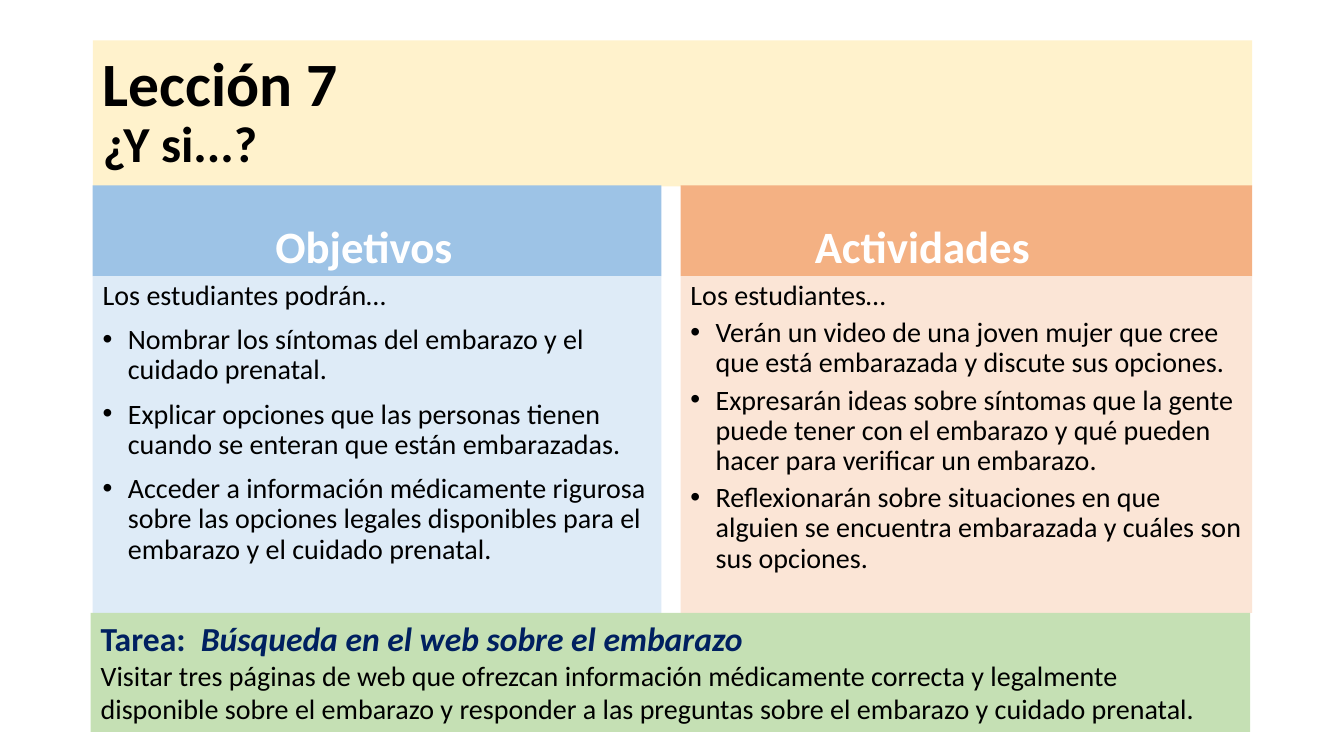
from dataclasses import dataclass

from lxml import etree
from pptx import Presentation
from pptx.dml.color import RGBColor
from pptx.enum.shapes import MSO_SHAPE
from pptx.enum.text import MSO_ANCHOR, MSO_AUTO_SIZE, PP_ALIGN
from pptx.oxml.ns import qn
from pptx.util import Inches, Pt

RECTANGLE = MSO_SHAPE.RECTANGLE
TOP, MIDDLE, BOTTOM = MSO_ANCHOR.TOP, MSO_ANCHOR.MIDDLE, MSO_ANCHOR.BOTTOM
LEFT, CENTER = PP_ALIGN.LEFT, PP_ALIGN.CENTER
NO_AUTOFIT = MSO_AUTO_SIZE.NONE
TITLE_ONLY = 5


@dataclass(frozen=True)
class Theme:
    font: str = "Calibri"
    ink: str = "000000"
    white: str = "FFFFFF"
    navy: str = "002060"
    cream: str = "FFF2CC"
    blue: str = "9DC3E6"
    pale_blue: str = "DEEBF7"
    orange: str = "F4B183"
    pale_orange: str = "FBE5D6"
    green: str = "C5E0B4"
    title: int = 44
    subtitle: int = 36
    heading: int = 32
    task: int = 24
    body: int = 20


def grid(cells):
    """Turn grid cells, each a tenth of an inch wide and high, into a length."""
    return Inches(cells / 10)


def add_span(para, text, *, size, color, font, bold=False, italic=False):
    span = para.add_run()
    span.text = text
    span.font.name = font
    span.font.size = Pt(size)
    span.font.color.rgb = RGBColor.from_string(color)
    span.font.bold = bold
    span.font.italic = italic


def add_bullet(para):
    properties = para._p.get_or_add_pPr()
    properties.set("marL", str(Inches(0.25)))
    properties.set("indent", str(-Inches(0.25)))
    etree.SubElement(properties, qn("a:buFont"), typeface="Arial")
    etree.SubElement(properties, qn("a:buChar"), char="•")


class LessonPage:
    def __init__(self, deck, theme):
        self.theme = theme
        self.page = deck.slides.add_slide(deck.slide_layouts[TITLE_ONLY])

    def words(self, para, text, **style):
        """Add text to a paragraph in the body style, changed by the keywords."""
        defaults = {"size": self.theme.body, "color": self.theme.ink, "font": self.theme.font}
        add_span(para, text, **(defaults | style))

    def prepare(self, box, fill, anchor):
        """Fill a box, set its text frame and return that frame."""
        box.fill.solid()
        box.fill.fore_color.rgb = RGBColor.from_string(fill)
        box.line.fill.background()
        frame = box.text_frame
        frame.word_wrap = True
        frame.auto_size = NO_AUTOFIT
        frame.vertical_anchor = anchor
        frame.paragraphs[0].alignment = LEFT
        return frame

    def panel(self, left, top, width, height, fill, anchor=TOP):
        box = self.page.shapes.add_shape(RECTANGLE, *map(grid, (left, top, width, height)))
        box.shadow.inherit = False
        return self.prepare(box, fill, anchor)

    def title(self, left, top, width, height, lesson, topic):
        box = self.page.shapes.title
        box.left, box.top, box.width, box.height = map(grid, (left, top, width, height))
        para = self.prepare(box, self.theme.cream, MIDDLE).paragraphs[0]
        para.line_spacing = 0.9
        self.words(para, lesson, size=self.theme.title, bold=True)
        para.add_line_break()
        self.words(para, topic, size=self.theme.subtitle, bold=True)

    def heading(self, left, top, width, height, text, fill, right_margin):
        frame = self.panel(left, top, width, height, fill, BOTTOM)
        frame.margin_right = grid(right_margin)
        frame.margin_bottom = grid(0.4)
        para = frame.paragraphs[0]
        para.alignment = CENTER
        self.words(para, text, size=self.theme.heading, color=self.theme.white, bold=True)

    def bullet_list(self, left, top, width, height, intro, items, fill, gap):
        frame = self.panel(left, top, width, height, fill)
        para = frame.paragraphs[0]
        para.line_spacing = 0.9
        self.words(para, intro)
        for item in items:
            para = frame.add_paragraph()
            para.alignment = LEFT
            para.line_spacing = 0.9
            para.space_before = Pt(gap)
            add_bullet(para)
            self.words(para, item)

    def homework(self, left, top, width, height, label, name, details):
        frame = self.panel(left, top, width, height, self.theme.green)
        para = frame.paragraphs[0]
        style = {"size": self.theme.task, "color": self.theme.navy, "bold": True}
        self.words(para, label, **style)
        self.words(para, name, italic=True, **style)
        para = frame.add_paragraph()
        para.alignment = LEFT
        self.words(para, details)


def main():
    deck = Presentation()
    deck.slide_width, deck.slide_height = Inches(13.33), Inches(7.5)
    theme = Theme()
    lesson = LessonPage(deck, theme)
    lesson.title(9.2, 4, 115, 14.5, "Lección 7", "¿Y si...?")

    columns = [
        dict(left=9.2, width=56.4, heading="Objetivos", dark=theme.blue,
             light=theme.pale_blue, right_margin=3.6, gap=10,
             intro="Los estudiantes podrán…",
             items=["Nombrar los síntomas del embarazo y el cuidado prenatal.",
                    "Explicar opciones que las personas tienen cuando se enteran "
                    "que están embarazadas.",
                    "Acceder a información médicamente rigurosa sobre las opciones "
                    "legales disponibles para el embarazo y el cuidado prenatal."]),
        dict(left=67.5, width=56.7, heading="Actividades", dark=theme.orange,
             light=theme.pale_orange, right_margin=9.7, gap=5,
             intro="Los estudiantes…",
             items=["Verán un video de una joven mujer que cree que está embarazada "
                    "y discute sus opciones.",
                    "Expresarán ideas sobre síntomas que la gente puede tener con el "
                    "embarazo y qué pueden hacer para verificar un embarazo.",
                    "Reflexionarán sobre situaciones en que alguien se encuentra "
                    "embarazada y cuáles son sus opciones."]),
    ]
    for column in columns:
        left, width = column["left"], column["width"]
        lesson.heading(left, 18.4, width, 9, column["heading"], column["dark"],
                       column["right_margin"])
        lesson.bullet_list(left, 27.4, width, 33.4, column["intro"], column["items"],
                           column["light"], column["gap"])

    lesson.homework(9, 60.8, 115, 11.8, "Tarea:  ", "Búsqueda en el web sobre el embarazo",
                    "Visitar tres páginas de web que ofrezcan información médicamente "
                    "correcta y legalmente disponible sobre el embarazo y responder a las "
                    "preguntas sobre el embarazo y cuidado prenatal.")
    deck.save("out.pptx")


if __name__ == "__main__":
    main()
